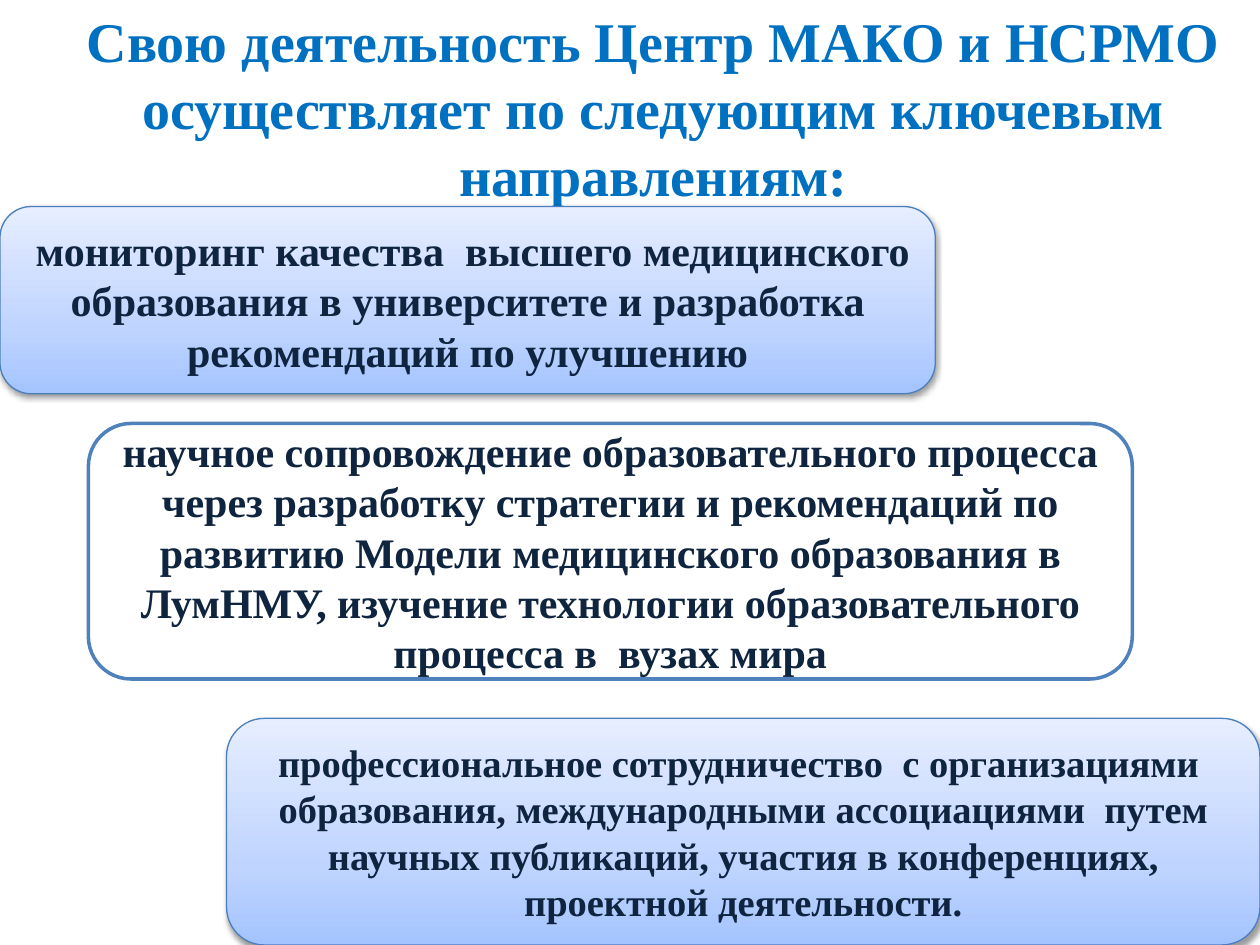
from lxml import etree
from pptx import Presentation
from pptx.dml.color import RGBColor
from pptx.enum import shapes, text
from pptx.oxml import ns
from pptx.util import Pt

BLUE = RGBColor(0x00, 0x70, 0xC0)
NAVY = RGBColor(0x0F, 0x24, 0x3E)
WHITE = RGBColor(0xFF, 0xFF, 0xFF)
OUTLINE = RGBColor(0x4F, 0x81, 0xBD)
SOFT_OUTLINE = RGBColor(0x4B, 0x7E, 0xBC)
BLACK = RGBColor(0x00, 0x00, 0x00)
GRADIENT = [
    (0, RGBColor(0xA4, 0xC4, 0xFF)),
    (35, RGBColor(0xBF, 0xD4, 0xFF)),
    (100, RGBColor(0xE6, 0xEE, 0xFF)),
]

TITLE = "Свою деятельность Центр МАКО и НСРМО осуществляет по следующим ключевым направлениям:"
# left, top, width, height, font size, raised, wording
DIRECTIONS = [
    (0, 118, 534.5, 107, 24, True,
     " мониторинг качества  высшего медицинского образования в университете "
     "и разработка рекомендаций по улучшению"),
    (50.5, 242, 596.5, 146, 24, False,
     "научное сопровождение образовательного процесса через разработку стратегии "
     "и рекомендаций по развитию Модели медицинского образования в ЛумНМУ, "
     "изучение технологии образовательного процесса в  вузах мира"),
    (129.5, 410.5, 590.5, 129.5, 22, True,
     "профессиональное сотрудничество  с организациями  образования, "
     "международными ассоциациями  путем научных публикаций, участия "
     "в конференциях, проектной деятельности."),
]


def set_all(target, values):
    for name, value in values.items():
        setattr(target, name, value)


def add_node(parent, tag, **attributes):
    values = {name: str(value) for name, value in attributes.items()}
    return etree.SubElement(parent, ns.qn(tag), values)


def write_text(shape, wording, size, color, frame_format):
    frame = shape.text_frame
    set_all(frame, {"word_wrap": True, "auto_size": text.MSO_AUTO_SIZE.NONE, **frame_format})
    para = frame.paragraphs[0]
    para.alignment = text.PP_ALIGN.CENTER
    span = para.add_run()
    span.text = wording
    set_all(span.font, {"name": "Times New Roman", "size": Pt(size), "bold": True})
    span.font.color.rgb = color


def raise_card(card):
    """Give the card its three-stop vertical gradient and a soft shadow below."""
    card.fill.gradient()
    card.fill.gradient_angle = 90
    stops = card._element.spPr.find(".//" + ns.qn("a:gsLst"))
    stops.clear()
    for position, color in GRADIENT:
        stop = add_node(stops, "a:gs", pos=position * 1000)
        add_node(stop, "a:srgbClr", val=color)

    effects = card._element.spPr.find(ns.qn("a:effectLst"))
    shadow = add_node(effects, "a:outerShdw", blurRad=Pt(3.1), dist=Pt(1.6),
                      dir=90 * 60000, rotWithShape=0)
    shade = add_node(shadow, "a:srgbClr", val=BLACK)
    add_node(shade, "a:alpha", val=38000)


def add_card(page, left, top, width, height, size, raised, wording):
    card = page.shapes.add_shape(shapes.MSO_SHAPE.ROUNDED_RECTANGLE,
                                 Pt(left), Pt(top), Pt(width), Pt(height))
    card.shadow.inherit = False
    card.line.color.rgb = SOFT_OUTLINE if raised else OUTLINE
    card.line.width = Pt(0.75 if raised else 2)
    if raised:
        raise_card(card)
    else:
        card.fill.solid()
        card.fill.fore_color.rgb = WHITE
    write_text(card, wording, size, NAVY, {"vertical_anchor": text.MSO_ANCHOR.MIDDLE})


def add_title(page):
    title = page.shapes.title
    set_all(title, {"left": Pt(0), "top": Pt(0), "width": Pt(720), "height": Pt(118)})
    write_text(title, TITLE, 32, BLUE, {
        "vertical_anchor": text.MSO_ANCHOR.TOP,
        "margin_left": Pt(34),
        "margin_bottom": Pt(0),
    })


def main():
    deck = Presentation()
    set_all(deck, {"slide_width": Pt(720), "slide_height": Pt(540)})
    page = deck.slides.add_slide(deck.slide_layouts[5])
    add_title(page)
    for direction in DIRECTIONS:
        add_card(page, *direction)
    deck.save("out.pptx")


if __name__ == "__main__":
    main()
